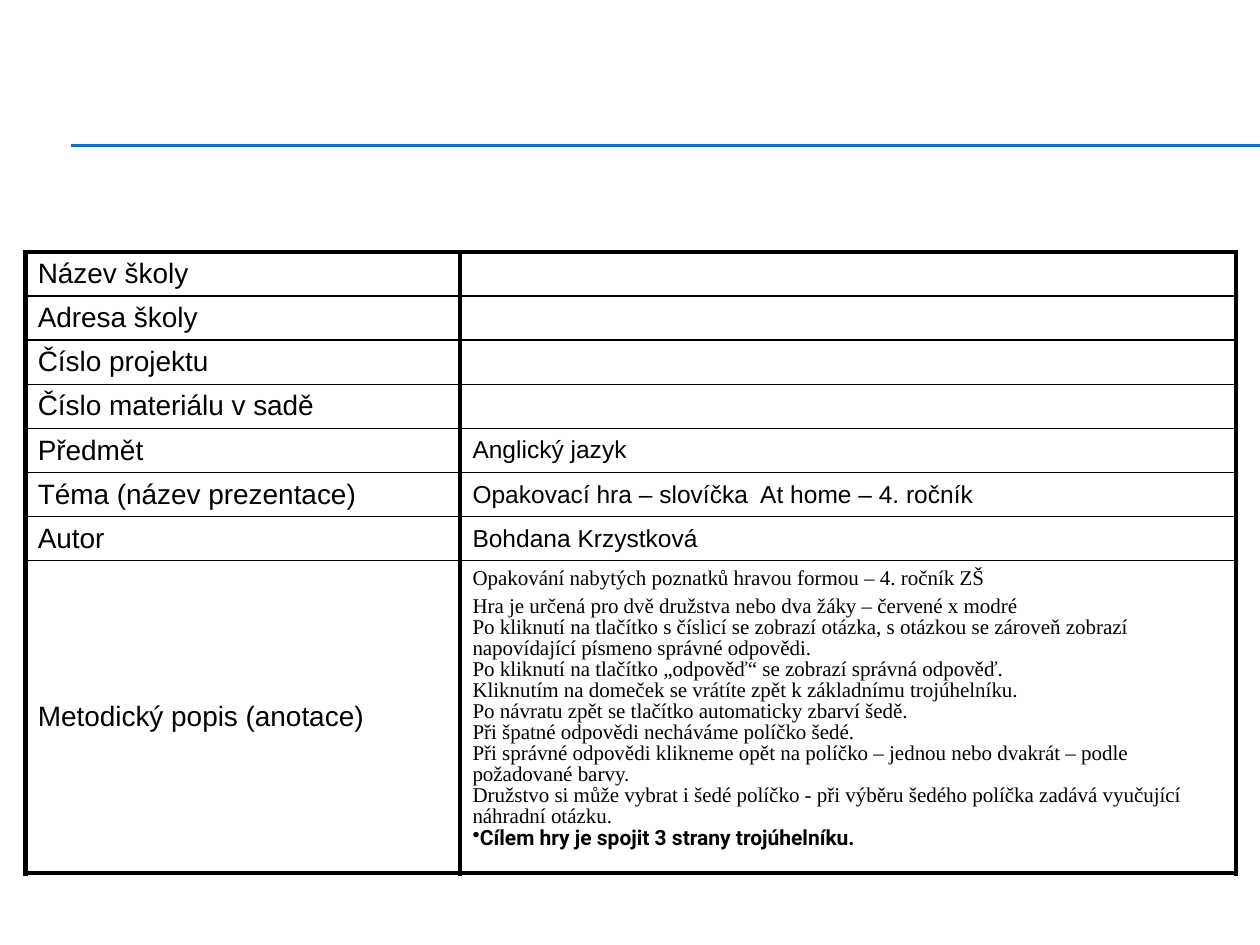
import pptx
import pptx.dml.color
import pptx.enum.shapes
import pptx.enum.text
import pptx.oxml.ns
import pptx.util
from dataclasses import dataclass
from lxml import etree
from pptx.util import Inches, Pt


@dataclass(frozen=True)
class Theme:
    ink: str = "000000"
    rule: str = "0F6FC6"
    label_size: int = 16
    value_size: int = 14
    note_size: int = 12
    sans: str = "Arial"
    serif: str = "Times New Roman"
    accent: str = "Roboto"


theme = Theme()
qn = pptx.oxml.ns.qn


def write(paragraph, text, *, size, font=theme.sans, bold=False,
          before=0, spacing=1.0, bullet=None):
    """Fill one paragraph; an empty text still fixes the line height."""
    if bullet:
        properties = paragraph._p.get_or_add_pPr()
        properties.set("marL", "0")
        properties.set("indent", "0")
        etree.SubElement(properties, qn("a:buChar"), char=bullet)
    paragraph.space_before = Pt(before)
    paragraph.line_spacing = spacing
    if not text:
        etree.SubElement(paragraph._p, qn("a:endParaRPr"), sz=str(size * 100))
        return
    run = paragraph.add_run()
    run.text = text
    run.font.size = Pt(size)
    run.font.name = font
    run.font.bold = bold
    run.font.color.rgb = pptx.dml.color.RGBColor.from_string(theme.ink)


def set_borders(cell, **widths):
    """Draw cell borders; widths in points by side: L, R, T, B."""
    properties = cell._tc.get_or_add_tcPr()
    for position, side in enumerate("LRTB"):
        border = etree.Element(qn(f"a:ln{side}"), w=str(Pt(widths[side])))
        fill = etree.SubElement(border, qn("a:solidFill"))
        etree.SubElement(fill, qn("a:srgbClr"), val=theme.ink)
        properties.insert(position, border)


presentation = pptx.Presentation()
presentation.slide_width = Inches(10)
presentation.slide_height = Inches(7.5)
slide = presentation.slides.add_slide(presentation.slide_layouts[6])

# Double rule across the top
for y in (1.15, 1.16):
    rule = slide.shapes.add_connector(
        pptx.enum.shapes.MSO_CONNECTOR.STRAIGHT,
        Inches(0.56), Inches(y), Inches(10), Inches(y))
    rule.line.color.rgb = pptx.dml.color.RGBColor.from_string(theme.rule)
    rule.line.width = Pt(0.75)
    etree.SubElement(rule._element.spPr, qn("a:effectLst"))

# Information table
rows = [
    ("Název školy", ""),
    ("Adresa školy", ""),
    ("Číslo projektu", ""),
    ("Číslo materiálu v sadě", ""),
    ("Předmět", "Anglický jazyk"),
    ("Téma (název prezentace)", "Opakovací hra – slovíčka  At home – 4. ročník"),
    ("Autor", "Bohdana Krzystková"),
    ("Metodický popis (anotace)", None),
]
introduction = [
    "Opakování nabytých poznatků hravou formou – 4. ročník ZŠ",
    "Hra je určená pro dvě družstva nebo dva žáky – červené x modré",
]
rules_of_game = [
    "Po kliknutí na tlačítko s číslicí se zobrazí otázka, s otázkou se zároveň zobrazí "
    "napovídající písmeno správné odpovědi.",
    "Po kliknutí na tlačítko „odpověď“ se zobrazí správná odpověď.",
    "Kliknutím na domeček se vrátíte zpět k základnímu trojúhelníku.",
    "Po návratu zpět se tlačítko automaticky zbarví šedě.",
    "Při špatné odpovědi necháváme políčko šedé.",
    "Při správné odpovědi klikneme opět na políčko – jednou nebo dvakrát – podle "
    "požadované barvy.",
    "Družstvo si může vybrat i šedé políčko - při výběru šedého políčka zadává vyučující "
    "náhradní otázku.",
]
goal = "Cílem hry je spojit 3 strany trojúhelníku."

column_widths = (3.45, 6.16)
row_heights = [0.35] * (len(rows) - 1) + [2.48]
table = slide.shapes.add_table(
    len(rows), 2, Inches(0.2), Inches(2),
    Inches(sum(column_widths)), Inches(sum(row_heights))).table
table.first_row = False
table.horz_banding = False
for column, width in zip(table.columns, column_widths):
    column.width = Inches(width)

last = len(rows) - 1
for index, (row, height) in enumerate(zip(table.rows, row_heights)):
    row.height = Inches(height)
    for cell, text, size in zip(row.cells, rows[index],
                                (theme.label_size, theme.value_size)):
        cell.fill.background()
        cell.margin_left = cell.margin_right = Inches(0.1)
        cell.margin_top = cell.margin_bottom = Inches(0.05)
        cell.vertical_anchor = pptx.enum.text.MSO_ANCHOR.MIDDLE
        set_borders(cell, L=3, R=3, T=3 if index == 0 else 1,
                    B=3 if index == last else 1)
        if text is not None:
            write(cell.text_frame.paragraphs[0], text, size=size)

# Description of the game
description = table.cell(last, 1)
description.vertical_anchor = pptx.enum.text.MSO_ANCHOR.TOP
frame = description.text_frame
write(frame.paragraphs[0], introduction[0], size=theme.note_size, font=theme.serif)
write(frame.add_paragraph(), introduction[1], size=theme.note_size,
      font=theme.serif, before=2.4)
for text in rules_of_game:
    write(frame.add_paragraph(), text, size=theme.note_size,
          font=theme.serif, spacing=0.9)
write(frame.add_paragraph(), goal, size=theme.note_size, font=theme.accent,
      bold=True, spacing=0.9, bullet="•")

presentation.save("out.pptx")
